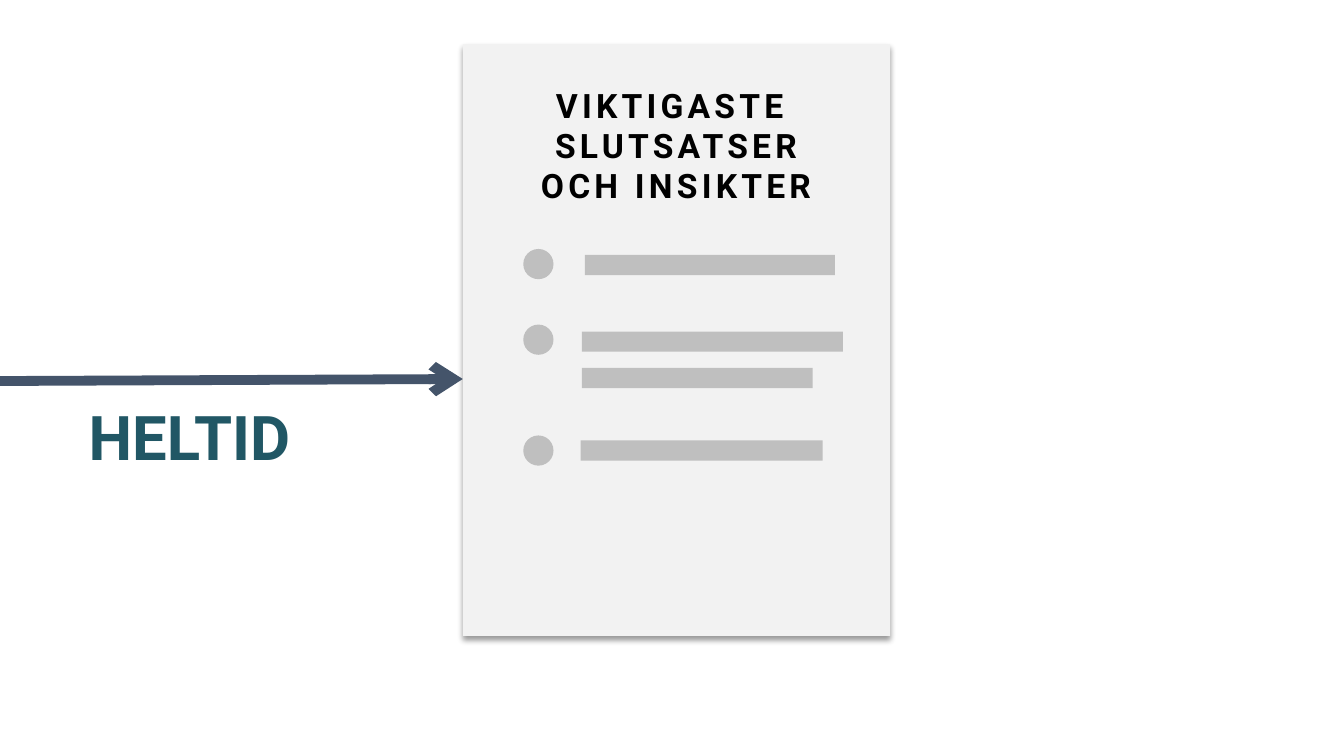
from lxml import etree
from pptx import Presentation
from pptx.dml.color import RGBColor
from pptx.enum.shapes import MSO_CONNECTOR, MSO_SHAPE
from pptx.enum.text import MSO_ANCHOR, MSO_AUTO_SIZE, PP_ALIGN
from pptx.oxml import parse_xml
from pptx.oxml.ns import nsdecls, qn
from pptx.util import Pt

PX = 9144  # 100 px to the inch
RECTANGLE, OVAL = MSO_SHAPE.RECTANGLE, MSO_SHAPE.OVAL
STRAIGHT = MSO_CONNECTOR.STRAIGHT
TOP, MIDDLE = MSO_ANCHOR.TOP, MSO_ANCHOR.MIDDLE
CENTER = PP_ALIGN.CENTER
FIXED_SIZE = MSO_AUTO_SIZE.NONE
TITLE_ONLY = 5

presentation = Presentation()
presentation.slide_width = 1333 * PX
presentation.slide_height = 750 * PX
slide = presentation.slides.add_slide(presentation.slide_layouts[TITLE_ONLY])


def add_block(kind, left, top, width, height, color):
    """Add a filled shape without outline or shadow."""
    shape = slide.shapes.add_shape(kind, left * PX, top * PX, width * PX, height * PX)
    shape.fill.solid()
    shape.fill.fore_color.rgb = RGBColor.from_string(color)
    shape.line.fill.background()
    shape.shadow.inherit = False
    return shape


def write_lines(shape, lines, anchor, size, color, line_spacing):
    """Fill a shape with centred bold paragraphs."""
    frame = shape.text_frame
    frame.word_wrap = True
    frame.auto_size = FIXED_SIZE
    frame.vertical_anchor = anchor
    frame.text = "\n".join(lines)
    font_format = {"name": "Roboto", "size": Pt(size), "bold": True}
    for paragraph in frame.paragraphs:
        paragraph.alignment = CENTER
        paragraph.line_spacing = line_spacing
        font = paragraph.runs[0].font
        for attribute, value in font_format.items():
            setattr(font, attribute, value)
        font.color.rgb = RGBColor.from_string(color)


# Paper sheet with a soft shadow below it
sheet = add_block(RECTANGLE, 459, 44, 424, 587, "F2F2F2")
sheet_effects = sheet._element.spPr.find(qn("a:effectLst"))
sheet_effects.append(parse_xml(
    f'<a:outerShdw {nsdecls("a")} blurRad="50800" dist="38100" dir="5400000" '
    'algn="t" rotWithShape="0"><a:srgbClr val="000000"><a:alpha val="40000"/>'
    "</a:srgbClr></a:outerShdw>"))

# Bullet list sketched with dots and bars
for left, top, width in [(580, 253, 248), (577, 329, 259), (577, 365, 229), (576, 437, 240)]:
    add_block(RECTANGLE, left, top, width, 20, "BFBFBF")
for top in (247, 322, 432):
    add_block(OVAL, 519, top, 30, 30, "BFBFBF")

# Heading on the sheet, brought in front of it
title = slide.shapes.title
slide.shapes._spTree.append(title._element)
title_box = {"left": 475, "top": 79, "width": 391, "height": 158}
for attribute, value in title_box.items():
    setattr(title, attribute, value * PX)
write_lines(title, ["VIKTIGASTE ", "SLUTSATSER", "OCH INSIKTER"], TOP, 24, "000000", 1.0)
for paragraph in title.text_frame.paragraphs:
    paragraph.runs[0]._r.get_or_add_rPr().set("spc", "300")

# Arrow leading to the sheet
arrow = slide.shapes.add_connector(STRAIGHT, 0, 378 * PX, 459 * PX, 376 * PX)
arrow.line.color.rgb = RGBColor.from_string("44546A")
arrow.line.width = Pt(7)
etree.SubElement(arrow.line._get_or_add_ln(), qn("a:tailEnd"), type="arrow")
etree.SubElement(arrow._element.spPr, qn("a:effectLst"))

label = add_block(RECTANGLE, 71, 399, 234, 77, "FFFFFF")
write_lines(label, ["HELTID"], MIDDLE, 44, "215765", 0.9)

presentation.save("out.pptx")
